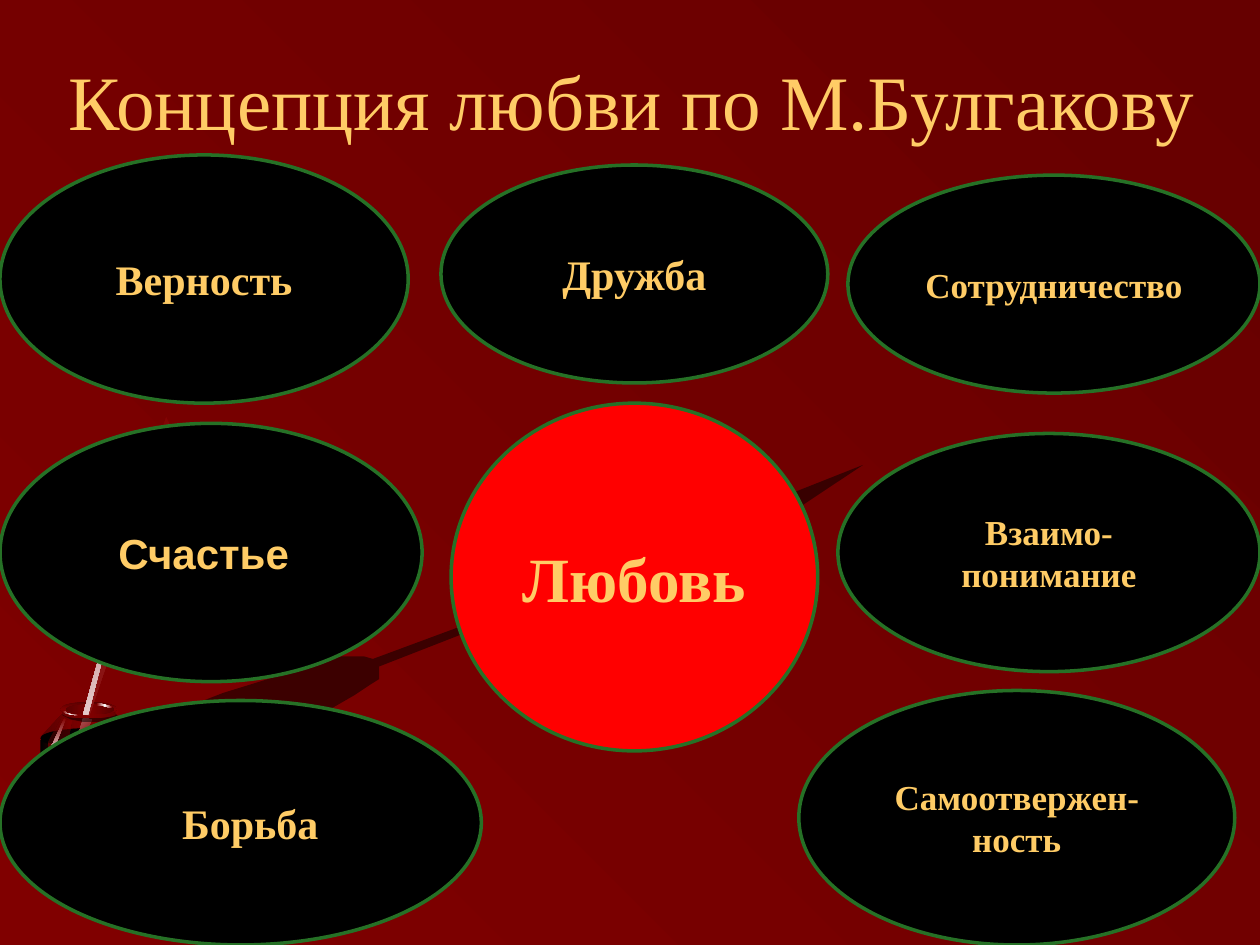
from copy import deepcopy
from dataclasses import dataclass

from lxml import etree
from pptx import Presentation
from pptx.dml.color import RGBColor
from pptx.enum.shapes import MSO_SHAPE
from pptx.enum.text import MSO_ANCHOR, PP_ALIGN
from pptx.oxml.ns import qn
from pptx.util import Pt

PX = 9144  # EMU in one px, 100 px to the inch
WIDTH, HEIGHT = 1000, 750
OVAL, RECTANGLE = MSO_SHAPE.OVAL, MSO_SHAPE.RECTANGLE
MIDDLE = MSO_ANCHOR.MIDDLE
CENTER, LEFT = PP_ALIGN.CENTER, PP_ALIGN.LEFT


@dataclass(frozen=True)
class Solid:
    color: str
    opacity: int = 100


@dataclass(frozen=True)
class Gradient:
    """Evenly spaced colours; the angle runs clockwise."""
    colors: tuple
    angle: int = 0


@dataclass(frozen=True)
class Theme:
    background = Gradient(("800000", "660000"), 315)
    black = Solid("000000")
    shadow = Solid("000000", 50)
    red = Solid("800000")
    heart = Solid("FF0000")
    tube = Gradient(("000000", "800000", "000000"))
    rim = Gradient(("590000", "800000", "590000"))
    rim_down = Gradient(("590000", "800000", "590000"), 90)
    shade = Gradient(("590000", "800000"))
    shine = Gradient(("800000", "FFFFFF", "800000"))
    shine_down = Gradient(("800000", "FFFFFF", "800000"), 90)
    glint = Gradient(("B36666", "800000"), 45)
    feather = Gradient(("800000", "8D1919"), 45)
    quill = Gradient(("800000", "FFFFFF"), 45)
    text = "FFCC66"
    outline = "267126"
    outline_width = 2
    serif, sans = "Times New Roman", "Arial"
    title_size, center_size, idea_size, long_idea_size = 44, 36, 24, 20


class SlideBuilder:
    def __init__(self, slide, theme):
        self.slide = slide
        self.theme = theme

    def paint(self, fill, element, style):
        if isinstance(style, Solid):
            fill.solid()
            fill.fore_color.rgb = RGBColor.from_string(style.color)
            if style.opacity < 100:
                color = next(element.iter(qn("a:srgbClr")))
                etree.SubElement(color, qn("a:alpha"), val=str(style.opacity * 1000))
            return
        fill.gradient()
        fill.gradient_angle = -style.angle % 360
        stop_list = next(element.iter(qn("a:gsLst")))
        while len(stop_list) < len(style.colors):
            stop_list.append(deepcopy(stop_list[0]))
        for index, (stop, color) in enumerate(zip(fill.gradient_stops, style.colors)):
            stop.position = index / (len(style.colors) - 1)
            stop.color.rgb = RGBColor.from_string(color)

    def background(self):
        self.paint(self.slide.background.fill, self.slide.element, self.theme.background)

    def finish(self, shape, style):
        shape.shadow.inherit = False
        self.paint(shape.fill, shape.element, style)
        shape.line.fill.background()
        return shape

    def shape(self, kind, box, style):
        shape = self.slide.shapes.add_shape(kind, *(value * PX for value in box))
        return self.finish(shape, style)

    def outline(self, points, style):
        builder = self.slide.shapes.build_freeform(*points[0], scale=PX)
        builder.add_line_segments(points[1:], close=True)
        return self.finish(builder.convert_to_shape(), style)

    def set_text(self, shape, text, size, font_name, bold, alignment=CENTER, indent=0):
        frame = shape.text_frame
        frame.word_wrap = True
        frame.vertical_anchor = MIDDLE
        frame.text = text
        for paragraph in frame.paragraphs:
            paragraph.alignment = alignment
            if indent:
                paragraph._p.get_or_add_pPr().set("indent", str(indent * PX))
            for run in paragraph.runs:
                run.font.size = Pt(size)
                run.font.name = font_name
                run.font.bold = bold
                run.font.color.rgb = RGBColor.from_string(self.theme.text)

    def title(self, box, text):
        shape = self.slide.shapes.add_textbox(*(value * PX for value in box))
        self.set_text(shape, text, self.theme.title_size, self.theme.serif, False)

    def idea(self, box, text, size, style=None, font_name=None, left_inset=10, **layout):
        shape = self.shape(OVAL, box, style or self.theme.black)
        shape.line.color.rgb = RGBColor.from_string(self.theme.outline)
        shape.line.width = Pt(self.theme.outline_width)
        shape.text_frame.margin_left = left_inset * PX
        self.set_text(shape, text, size, font_name or self.theme.serif, True, **layout)


def draw_quill_shadow(builder):
    builder.outline([
        (99, 634), (112, 630), (229, 582), (281, 552), (293, 544), (301, 539), (301, 529),
        (383, 497), (396, 496), (409, 495), (429, 492), (448, 487), (474, 477), (458, 470),
        (480, 474), (494, 470), (478, 462), (499, 467), (515, 460), (501, 451), (524, 455),
        (553, 444), (600, 422), (637, 401), (685, 369), (622, 394), (585, 409), (553, 422),
        (513, 439), (471, 452), (410, 478), (377, 493), (296, 523), (289, 521), (271, 521),
        (177, 550), (100, 580), (103, 585), (105, 584), (100, 635)], builder.theme.shadow)


def draw_inkwell(builder):
    theme = builder.theme
    builder.shape(OVAL, (32, 615, 76, 25), theme.black)
    builder.shape(OVAL, (33, 614, 76, 24), theme.tube)
    builder.shape(OVAL, (48, 557, 46, 15), theme.red)
    builder.shape(OVAL, (48, 557, 45, 12), theme.rim_down)
    builder.outline([(32, 585), (51, 565), (90, 565), (109, 585)], theme.rim)
    builder.shape(RECTANGLE, (32, 587, 76, 40), theme.tube)
    builder.shape(OVAL, (32, 578, 76, 16), theme.black)
    builder.outline([(49, 570), (38, 589), (38, 632), (44, 636), (48, 637), (53, 638),
                     (53, 593), (57, 572), (55, 572), (52, 571)], theme.shade)
    builder.shape(OVAL, (52, 559, 39, 8), theme.rim)
    builder.shape(OVAL, (33, 578, 73, 15), theme.shadow)
    details = [
        ([(40, 593), (40, 632), (44, 634), (44, 594), (44, 592), (45, 589), (52, 571),
          (51, 570), (42, 590)], theme.shine_down),
        ([(107, 586), (107, 629), (105, 631), (105, 587), (90, 569), (92, 569)], theme.red),
        ([(77, 558), (82, 559), (86, 560), (89, 561), (88, 562), (85, 561), (81, 560),
          (77, 560)], theme.shine),
        ([(85, 578), (91, 578), (95, 579), (98, 580), (97, 581), (94, 580), (90, 579),
          (86, 579)], theme.shine),
        ([(62, 568), (56, 567), (52, 566), (50, 565), (51, 564), (53, 566), (57, 567),
          (61, 567)], theme.shine),
        ([(66, 570), (73, 571), (70, 577), (69, 581), (67, 584), (66, 588), (65, 590),
          (61, 590), (59, 589), (60, 585), (63, 581), (64, 577), (65, 574)], theme.glint),
        ([(49, 567), (53, 569), (60, 570), (70, 570), (80, 570), (87, 569), (91, 568),
          (92, 567), (94, 569), (87, 572), (77, 573), (66, 573), (56, 571), (50, 568)],
         theme.shadow),
    ]
    for points, style in details:
        builder.outline(points, style)


def draw_quill(builder):
    builder.outline([
        (128, 342), (122, 359), (116, 381), (111, 403), (104, 432), (95, 465), (88, 496),
        (81, 519), (66, 567), (71, 568), (89, 515), (105, 497), (113, 481), (119, 469),
        (103, 468), (120, 466), (122, 461), (106, 459), (123, 459), (126, 450), (107, 450),
        (127, 446), (133, 415), (137, 386), (139, 365), (139, 351), (137, 342),
        (132, 331)], builder.theme.feather)
    builder.outline([(66, 567), (127, 346), (70, 567)], builder.theme.quill)


def draw_ideas(builder):
    theme = builder.theme
    normal, small = theme.idea_size, theme.long_idea_size
    builder.idea((358, 320, 291, 276), "Любовь", theme.center_size, theme.heart)
    builder.idea((0, 123, 324, 197), "Верность", normal)
    builder.idea((673, 139, 327, 173), "Сотрудничество", small)
    builder.idea((634, 548, 346, 202), "Самоотвержен-\nность", small)
    builder.idea((350, 131, 307, 173), "Дружба", normal)
    builder.idea((0, 336, 335, 205), "Счастье", normal, font_name=theme.sans,
                 alignment=LEFT, indent=35)
    builder.idea((0, 556, 382, 194), "Борьба", normal, left_inset=25)
    builder.idea((665, 344, 335, 189), "Взаимо-\nпонимание", small)


def main():
    presentation = Presentation()
    presentation.slide_width = WIDTH * PX
    presentation.slide_height = HEIGHT * PX
    slide = presentation.slides.add_slide(presentation.slide_layouts[6])
    builder = SlideBuilder(slide, Theme())
    builder.background()
    draw_quill_shadow(builder)
    draw_inkwell(builder)
    draw_quill(builder)
    builder.title((20, 13, 963, 132), "Концепция любви по М.Булгакову")
    draw_ideas(builder)
    presentation.save("out.pptx")


if __name__ == "__main__":
    main()
